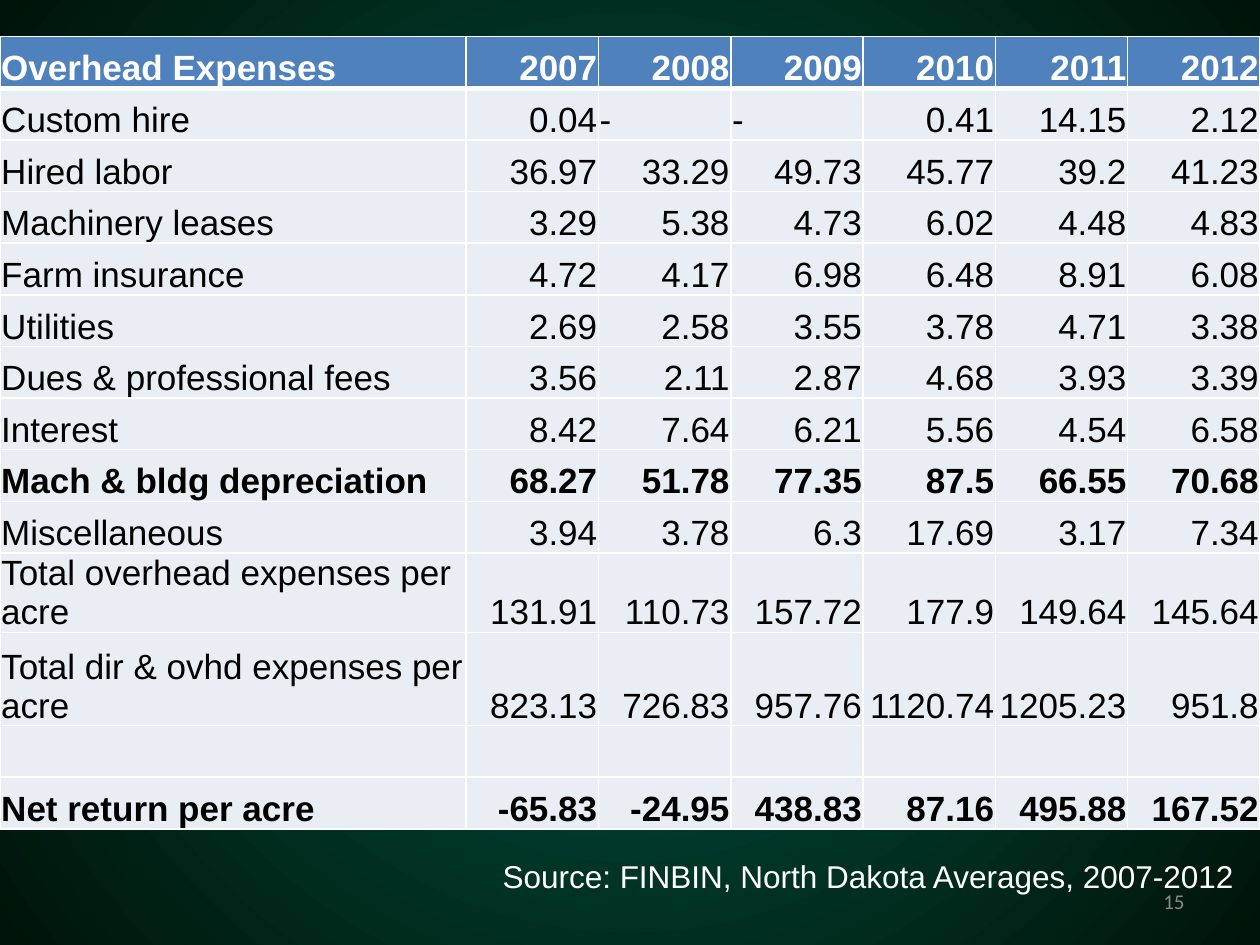
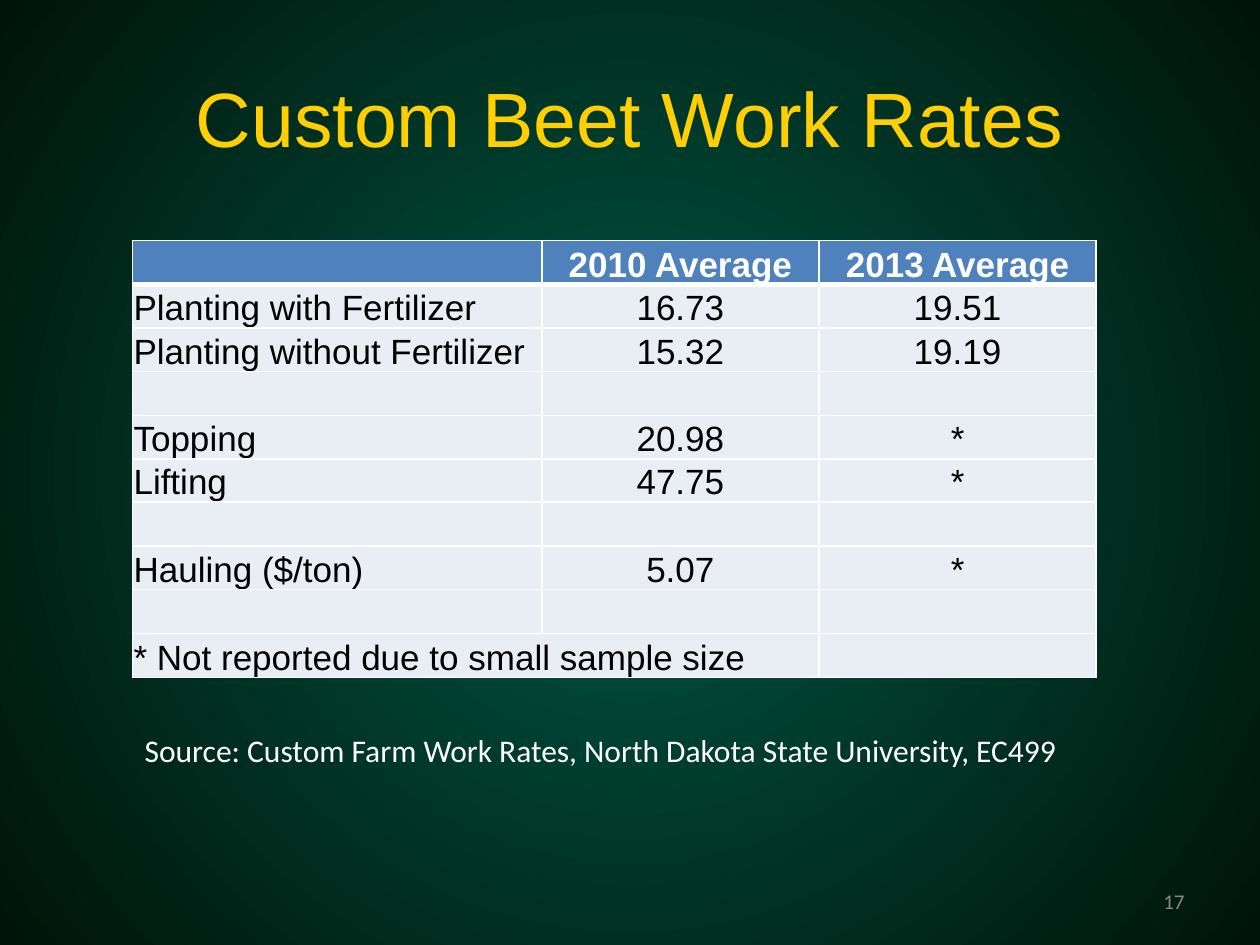
from dataclasses import dataclass

from lxml import etree
from pptx import Presentation
from pptx import util as u
from pptx.dml import color
from pptx.enum import text
from pptx.oxml import ns

WHITE = "FFFFFF"
BLACK = "000000"
GOLD = "FFCF01"
GRAY = "898989"
HEADER_BLUE = "4F81BD"
BODY_BLUE = "E9EDF4"
BACKDROP = (("005643", 0.02), ("001409", 1.0))
LEFT, CENTER, RIGHT = text.PP_ALIGN.LEFT, text.PP_ALIGN.CENTER, text.PP_ALIGN.RIGHT
TOP, MIDDLE, BOTTOM = text.MSO_ANCHOR.TOP, text.MSO_ANCHOR.MIDDLE, text.MSO_ANCHOR.BOTTOM


@dataclass(frozen=True)
class Box:
    left: float
    top: float
    width: float
    height: float

    def inches(self) -> list:
        return [u.Inches(n) for n in (self.left, self.top, self.width, self.height)]


@dataclass(frozen=True)
class TableDesign:
    left: float
    top: float
    columns: list[float]
    heights: list[float]
    rows: list[list[str]]
    value_align: text.PP_ALIGN
    bold_rows: tuple[int, ...] = ()


TITLE_BOX = Box(0.5, 0.3, 9, 1.25)
NUMBER_BOX = Box(7.17, 6.95, 2.33, 0.4)

OVERHEAD = TableDesign(
    0, 0.29, [3.7] + [1.05] * 6, [0.41] * 10 + [0.63, 0.74, 0.41, 0.41],
    [
        ["Overhead Expenses", "2007", "2008", "2009", "2010", "2011", "2012"],
        ["Custom hire", "0.04", "-", "-", "0.41", "14.15", "2.12"],
        ["Hired labor", "36.97", "33.29", "49.73", "45.77", "39.2", "41.23"],
        ["Machinery leases", "3.29", "5.38", "4.73", "6.02", "4.48", "4.83"],
        ["Farm insurance", "4.72", "4.17", "6.98", "6.48", "8.91", "6.08"],
        ["Utilities", "2.69", "2.58", "3.55", "3.78", "4.71", "3.38"],
        ["Dues & professional fees", "3.56", "2.11", "2.87", "4.68", "3.93", "3.39"],
        ["Interest", "8.42", "7.64", "6.21", "5.56", "4.54", "6.58"],
        ["Mach & bldg depreciation", "68.27", "51.78", "77.35", "87.5", "66.55", "70.68"],
        ["Miscellaneous", "3.94", "3.78", "6.3", "17.69", "3.17", "7.34"],
        ["Total overhead expenses per acre",
         "131.91", "110.73", "157.72", "177.9", "149.64", "145.64"],
        ["Total dir & ovhd expenses per acre",
         "823.13", "726.83", "957.76", "1120.74", "1205.23", "951.8"],
        [""] * 7,
        ["Net return per acre", "-65.83", "-24.95", "438.83", "87.16", "495.88", "167.52"],
    ],
    RIGHT, bold_rows=(8, 13),
)

WORK_RATES = TableDesign(
    1.05, 1.91, [3.25, 2.2, 2.2],
    [0.35, 0.32, 0.32, 0.35, 0.32, 0.32, 0.35, 0.32, 0.35, 0.35],
    [
        ["", "2010 Average", "2013 Average"],
        ["Planting with Fertilizer", "16.73", "19.51"],
        ["Planting without Fertilizer", "15.32", "19.19"],
        [""] * 3,
        ["Topping", "20.98", "*"],
        ["Lifting", "47.75", "*"],
        [""] * 3,
        ["Hauling ($/ton)", "5.07", "*"],
        [""] * 3,
        ["* Not reported due to small sample size", "", ""],
    ],
    CENTER,
)


def rgb(value: str) -> color.RGBColor:
    return color.RGBColor.from_string(value)


def write(frame, words: str, *, size: float = 20, font: str = "Arial",
          ink: str = WHITE, bold: bool = False, align=LEFT) -> None:
    paragraph = frame.paragraphs[0]
    paragraph.alignment = align
    if words:
        run = paragraph.add_run()
        run.text = words
        run.font.size = u.Pt(size)
        run.font.name = font
        run.font.bold = bold
        run.font.color.rgb = rgb(ink)


def add_text(slide, box: Box, words: str, *, anchor=TOP, **style) -> None:
    frame = slide.shapes.add_textbox(*box.inches()).text_frame
    frame.word_wrap = True
    frame.vertical_anchor = anchor
    write(frame, words, **style)


def add_page_number(slide, number: int) -> None:
    add_text(slide, NUMBER_BOX, str(number), anchor=MIDDLE, size=12,
             font="Calibri", ink=GRAY, align=RIGHT)


def set_borders(cell, **widths: float) -> None:
    properties = cell._tc.get_or_add_tcPr()
    for index, side in enumerate("LRTB"):
        line = etree.Element(ns.qn(f"a:ln{side}"), w=str(u.Pt(widths.get(side, 1))))
        solid = etree.SubElement(line, ns.qn("a:solidFill"))
        etree.SubElement(solid, ns.qn("a:srgbClr"), val=WHITE)
        properties.insert(index, line)


def add_table(slide, design: TableDesign):
    box = Box(design.left, design.top, sum(design.columns), sum(design.heights))
    table = slide.shapes.add_table(
        len(design.rows), len(design.columns), *box.inches()).table
    table.horz_banding = False
    for column, width in zip(table.columns, design.columns):
        column.width = u.Inches(width)
    for index, (row, height, values) in enumerate(
            zip(table.rows, design.heights, design.rows)):
        row.height = u.Inches(height)
        header = index == 0
        for position, (cell, value) in enumerate(zip(row.cells, values)):
            cell.margin_left = cell.margin_right = cell.margin_top = u.Inches(0.01)
            cell.margin_bottom = 0
            cell.vertical_anchor = BOTTOM
            cell.fill.solid()
            cell.fill.fore_color.rgb = rgb(HEADER_BLUE if header else BODY_BLUE)
            set_borders(cell, T=3 if index == 1 else 1, B=3 if header else 1)
            write(cell.text_frame, value, ink=WHITE if header else BLACK,
                  bold=header or index in design.bold_rows,
                  align=LEFT if position == 0 or value == "-" else design.value_align)
    return table


def set_backdrop(master) -> None:
    fill = master.background.fill
    fill.gradient()
    for stop, (value, position) in zip(fill.gradient_stops, BACKDROP):
        stop.color.rgb = rgb(value)
        stop.position = position
    gradient = master.element.find(".//" + ns.qn("a:gradFill"))
    for linear in gradient.findall(ns.qn("a:lin")):
        gradient.remove(linear)
    circle = etree.Element(ns.qn("a:path"), attrib={"path": "circle"})
    etree.SubElement(circle, ns.qn("a:fillToRect"), l="50000", t="50000", r="50000", b="50000")
    gradient.find(ns.qn("a:gsLst")).addnext(circle)


def main() -> None:
    presentation = Presentation()
    presentation.slide_width = u.Inches(10)
    presentation.slide_height = u.Inches(7.5)
    set_backdrop(presentation.slide_master)
    blank = presentation.slide_layouts[6]

    overhead = presentation.slides.add_slide(blank)
    add_table(overhead, OVERHEAD)
    add_page_number(overhead, 15)
    add_text(overhead, Box(3.89, 6.75, 6.25, 0.4),
             "Source: FINBIN, North Dakota Averages, 2007-2012", size=18)

    rates = presentation.slides.add_slide(blank)
    add_text(rates, TITLE_BOX, "Custom Beet Work Rates", anchor=MIDDLE,
             size=44, ink=GOLD, align=CENTER)
    table = add_table(rates, WORK_RATES)
    last = len(WORK_RATES.rows) - 1
    table.cell(last, 0).merge(table.cell(last, 1))
    add_page_number(rates, 17)
    add_text(rates, Box(1.05, 5.75, 7.87, 0.4),
             "Source: Custom Farm Work Rates, North Dakota State University, EC499",
             size=18, font="Calibri")

    presentation.save("out.pptx")


if __name__ == "__main__":
    main()
